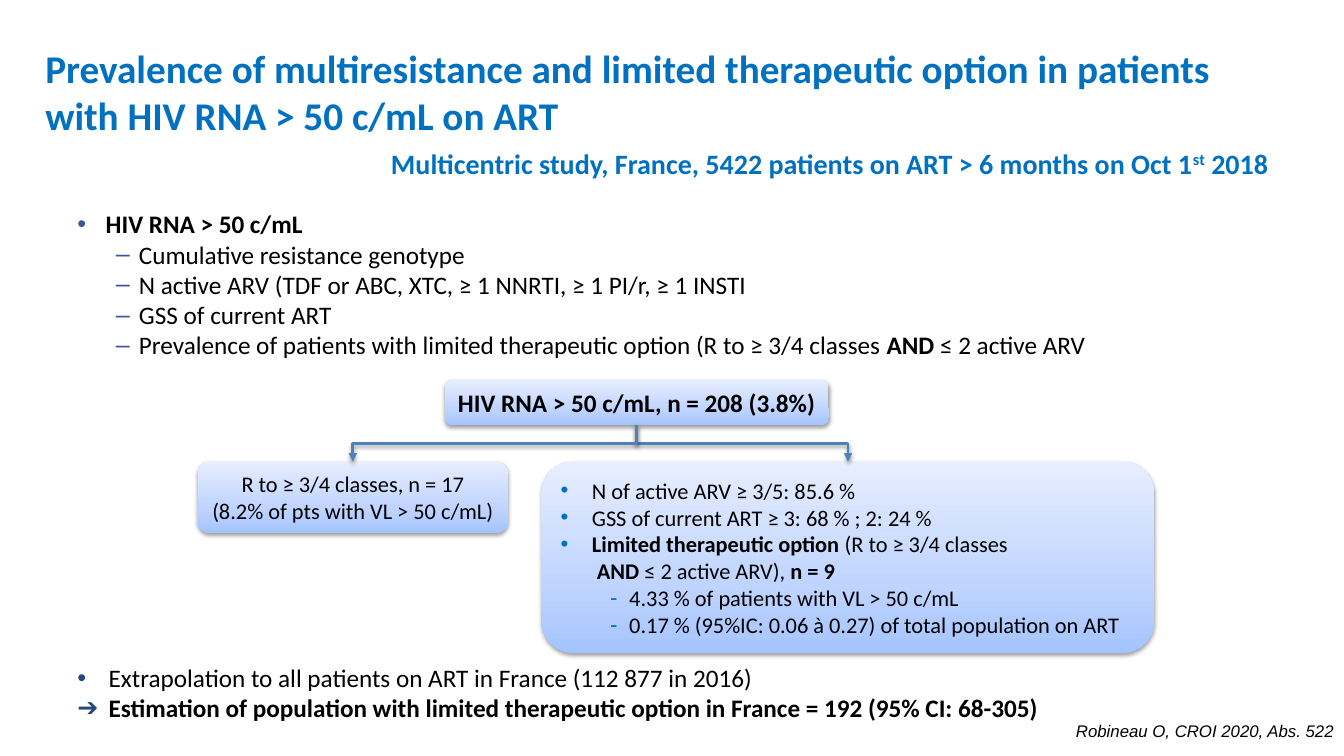
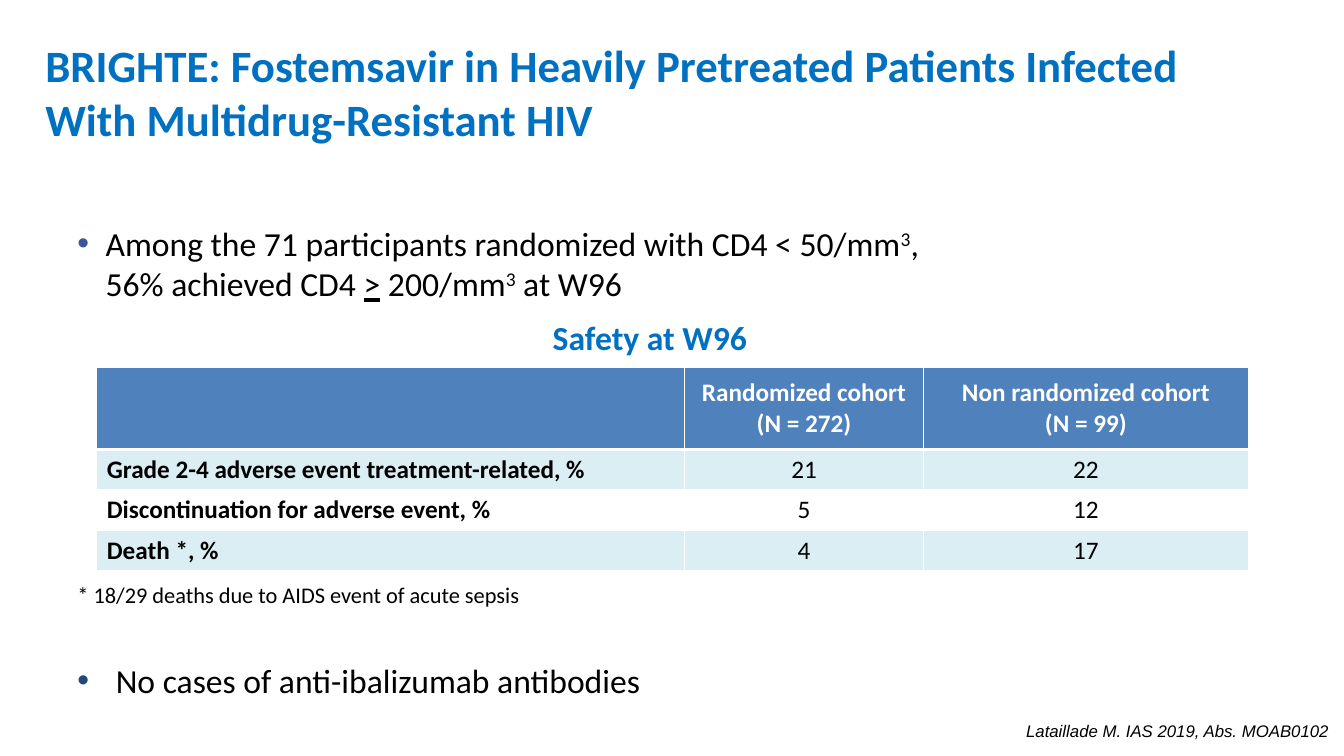
from copy import deepcopy

from lxml import etree
from pptx import Presentation
from pptx.dml.color import RGBColor
from pptx.enum import shapes, text
from pptx.oxml import ns
from pptx.util import Inches, Pt

BLUE, BLACK, WHITE = "0070C0", "000000", "FFFFFF"
STEEL, PALE, INDIGO, NAVY = "4F81BD", "DBEEF4", "3C549F", "1F497D"
BOX_GRADIENT = [(0, "A4C4FF"), (0.35, "BFD4FF"), (1, "E6EEFF")]
LEFT, CENTER, RIGHT = text.PP_ALIGN.LEFT, text.PP_ALIGN.CENTER, text.PP_ALIGN.RIGHT
TOP, MIDDLE = text.MSO_ANCHOR.TOP, text.MSO_ANCHOR.MIDDLE
TITLE_AREA = (0.35, 0.28, 12.31, 1.25)

# Bullets: character, colour, text indent, hanging distance
POINT = ("•", INDIGO, 0.28, 0.28)
DASH = ("–", INDIGO, 0.61, 0.23)
BOX_POINT = ("•", BLUE, 0.31, 0.31)
BOX_DASH = ("-", BLUE, 0.68, 0.19)
NOTE_POINT = ("•", NAVY, 0.31, 0.31)
NOTE_ARROW = ("➔", NAVY, 0.31, 0.31)
WIDE_POINT = ("•", NAVY, 0.38, 0.38)

# A paragraph is (bullet, span, span, ...); a span is text or (text, flags):
# b bold, u underlined, ^ superscript.
PREVALENCE_TITLE = ("Prevalence of multiresistance and limited therapeutic option "
                    "in patients with HIV RNA > 50 c/mL on ART")
STUDY = [(None, "Multicentric study, France, 5422 patients on ART > 6 months on Oct 1",
          ("st", "^"), " 2018")]
METHODS = [
    (POINT, ("HIV RNA > 50 c/mL", "b")),
    (DASH, "Cumulative resistance genotype"),
    (DASH, "N active ARV (TDF or ABC, XTC, ≥ 1 NNRTI, ≥ 1 PI/r, ≥ 1 INSTI"),
    (DASH, "GSS of current ART"),
    (DASH, "Prevalence of patients with limited therapeutic option (R to ≥ 3/4 classes ",
     ("AND", "b"), " ≤ 2 active ARV"),
]
VIREMIC = [(None, ("HIV RNA > 50 c/mL, n = 208 (3.8%)", "b"))]
RESISTANT = [(None, "R to ≥ 3/4 classes, n = 17\n(8.2% of pts with VL > 50 c/mL)")]
OPTIONS = [
    (BOX_POINT, "N of active ARV ≥ 3/5: 85.6 %"),
    (BOX_POINT, "GSS of current ART ≥ 3: 68 % ; 2: 24 %"),
    (BOX_POINT, ("Limited therapeutic option ", "b"), "(R to ≥ 3/4 classes\n ",
     ("AND", "b"), " ≤ 2 active ARV), ", ("n = 9", "b")),
    (BOX_DASH, "4.33 % of patients with VL > 50 c/mL"),
    (BOX_DASH, "0.17 % (95%IC: 0.06 à 0.27) of total population on ART"),
]
ESTIMATE = [
    (NOTE_POINT, "Extrapolation to all patients on ART in France (112 877 in 2016)"),
    (NOTE_ARROW, ("Estimation of population with limited therapeutic option in France "
                  "= 192 (95% CI: 68-305)", "b")),
]

BRIGHTE_TITLE = ("BRIGHTE: Fostemsavir in Heavily Pretreated Patients Infected "
                 "With Multidrug-Resistant HIV")
RECOVERY = [(POINT, "Among the 71 participants randomized with CD4 < 50/mm", ("3", "^"),
             ",\n56% achieved CD4 ", (">", "u"), " 200/mm", ("3", "^"), " at W96")]
SAFETY_ROWS = [
    ("", "Randomized cohort\n(N = 272)", "Non randomized cohort\n(N = 99)"),
    ("Grade 2-4 adverse event treatment-related, %", "21", "22"),
    ("Discontinuation for adverse event, %", "5", "12"),
    ("Death *, %", "4", "17"),
]
SAFETY_WIDTHS = (5.83, 2.37, 3.22)
SAFETY_HEIGHTS = (0.82, 0.4, 0.4, 0.4)


def rgb(value):
    return RGBColor.from_string(value)


def inches(area):
    return [Inches(length) for length in area]


def add_element(parent, tag, **attributes):
    return etree.SubElement(parent, ns.qn("a:" + tag),
                            {name: str(value) for name, value in attributes.items()})


def add_solid(parent, color):
    fill = add_element(parent, "solidFill")
    add_element(fill, "srgbClr", val=color)


def add_bullet(para, char, color, indent, hang):
    props = para._p.get_or_add_pPr()
    props.set("marL", str(Inches(indent)))
    props.set("indent", str(-Inches(hang)))
    add_element(add_element(props, "buClr"), "srgbClr", val=color)
    add_element(props, "buFont", typeface="Arial")
    add_element(props, "buChar", char=char)


def write(frame, paragraphs, size=18, color=BLACK, font="Calibri", bold=False,
          italic=False, align=LEFT, anchor=TOP, wrap=True):
    """Fill a text frame with paragraphs of bullets and spans."""
    frame.word_wrap = wrap
    frame.vertical_anchor = anchor
    for index, (bullet, *spans) in enumerate(paragraphs):
        para = frame.add_paragraph() if index else frame.paragraphs[0]
        para.alignment = align
        if bullet:
            add_bullet(para, *bullet)
        for span in spans:
            words, flags = (span, "") if isinstance(span, str) else span
            for number, line in enumerate(words.split("\n")):
                if number:
                    para.add_line_break()
                run = para.add_run()
                run.text = line
                run.font.name = font
                run.font.size = Pt(size)
                run.font.bold = bold or "b" in flags
                run.font.italic = italic
                run.font.underline = "u" in flags
                run.font.color.rgb = rgb(color)
                if "^" in flags:
                    run._r.get_or_add_rPr().set("baseline", "30000")


def add_text(page, area, paragraphs, **style):
    box = page.shapes.add_textbox(*inches(area))
    write(box.text_frame, paragraphs, **style)


def add_page(deck, title, size):
    page = deck.slides.add_slide(deck.slide_layouts[5])
    holder = page.shapes.title
    holder.left, holder.top, holder.width, holder.height = inches(TITLE_AREA)
    holder.text_frame.auto_size = text.MSO_AUTO_SIZE.NONE
    write(holder.text_frame, [(None, title)], size=size, color=BLUE, bold=True, anchor=MIDDLE)
    return page


def add_citation(page, area, words):
    add_text(page, area, [(None, words)], size=12, font="Arial", italic=True, align=RIGHT)


def add_soft_shadow(item):
    effects = add_element(item._element.spPr, "effectLst")
    shadow = add_element(effects, "outerShdw", blurRad=Pt(3.1), dist=Pt(1.6),
                         dir=5400000, rotWithShape=0)
    add_element(add_element(shadow, "srgbClr", val=BLACK), "alpha", val=38000)


def add_gradient_box(page, area, paragraphs, **style):
    box = page.shapes.add_shape(shapes.MSO_SHAPE.ROUNDED_RECTANGLE, *inches(area))
    box.fill.gradient()
    box.fill.gradient_angle = 90
    stop_list = box._element.spPr.find(".//" + ns.qn("a:gsLst"))
    stop_list.append(deepcopy(stop_list[0]))
    for stop, (position, color) in zip(box.fill.gradient_stops, BOX_GRADIENT):
        stop.position = position
        stop.color.rgb = rgb(color)
    box.line.fill.background()
    add_soft_shadow(box)
    write(box.text_frame, paragraphs, anchor=MIDDLE, **style)
    return box


def add_branch(page, parent, child):
    """Draw an elbow arrow from the bottom of parent to the top of child."""
    arrow = page.shapes.add_connector(shapes.MSO_CONNECTOR.ELBOW, 0, 0, 0, 0)
    arrow.begin_connect(parent, 2)
    arrow.end_connect(child, 0)
    x1, y1, x2, y2 = arrow.begin_x, arrow.begin_y, arrow.end_x, arrow.end_y
    drop, run = y2 - y1, abs(x2 - x1)
    # The elbow leaves downwards, so its frame is turned a quarter
    arrow.left, arrow.top = (x1 + x2 - drop) // 2, (y1 + y2 - run) // 2
    arrow.width, arrow.height = drop, run
    frame = arrow._element.spPr.find(ns.qn("a:xfrm"))
    to_right = x2 > x1
    frame.set("rot", "16200000" if to_right else "5400000")
    frame.set("flipH", "1" if to_right else "0")
    frame.set("flipV", "0")
    arrow.line.color.rgb = rgb(STEEL)
    arrow.line.width = Pt(2)
    add_element(arrow.line._get_or_add_ln(), "tailEnd", type="triangle")
    add_soft_shadow(arrow)


def add_borders(cell, bottom):
    props = cell._tc.get_or_add_tcPr()
    for index, (side, width) in enumerate(zip("LRTB", (1, 1, 1, bottom))):
        line = etree.Element(ns.qn("a:ln" + side), w=str(Pt(width)))
        add_solid(line, WHITE)
        props.insert(index, line)


def add_safety_table(page, left, top):
    area = (left, top, sum(SAFETY_WIDTHS), sum(SAFETY_HEIGHTS))
    table = page.shapes.add_table(len(SAFETY_ROWS), len(SAFETY_WIDTHS), *inches(area)).table
    for column, width in zip(table.columns, SAFETY_WIDTHS):
        column.width = Inches(width)
    for r, (values, height) in enumerate(zip(SAFETY_ROWS, SAFETY_HEIGHTS)):
        table.rows[r].height = Inches(height)
        header = r == 0
        for c, value in enumerate(values):
            cell = table.cell(r, c)
            cell.fill.solid()
            cell.fill.fore_color.rgb = rgb(STEEL if header else PALE if r % 2 else WHITE)
            add_borders(cell, bottom=3 if header else 1)
            cell.vertical_anchor = MIDDLE
            if value:
                write(cell.text_frame, [(None, value)], color=WHITE if header else BLACK,
                      bold=header or c == 0, align=CENTER if c else LEFT, anchor=None, wrap=None)


def build_prevalence(deck):
    page = add_page(deck, PREVALENCE_TITLE, 28)
    add_text(page, (0.67, 2.02, 12, 1.65), METHODS)
    viremic = add_gradient_box(page, (4.41, 3.77, 3.81, 0.45), VIREMIC,
                               align=CENTER, wrap=False)
    resistant = add_gradient_box(page, (1.96, 4.58, 3.08, 0.71), RESISTANT,
                                 size=16, align=CENTER, wrap=False)
    options = add_gradient_box(page, (5.37, 4.58, 6.08, 1.9), OPTIONS, size=16)
    add_text(page, (0.67, 6.52, 9.86, 0.71), ESTIMATE)
    add_citation(page, (9.08, 7.1, 4.25, 0.3), "Robineau O, CROI 2020, Abs. 522")
    add_text(page, (3.78, 1.4, 9, 0.44), STUDY, size=20, color=BLUE, bold=True)
    for child in (options, resistant):
        add_branch(page, viremic, child)


def build_safety(deck):
    page = add_page(deck, BRIGHTE_TITLE, 32)
    add_text(page, (0.67, 2.16, 12, 1.04), RECOVERY, size=24)
    add_text(page, (5.37, 3.09, 2.15, 0.5), [(None, "Safety at W96")], size=24,
             color=BLUE, bold=True, align=CENTER, wrap=False)
    add_safety_table(page, 0.96, 3.64)
    add_text(page, (0.67, 5.72, 4.64, 0.37),
             [(None, "* 18/29 deaths due to AIDS event of acute sepsis")], size=16, wrap=False)
    add_text(page, (0.67, 6.5, 8.28, 0.5),
             [(WIDE_POINT, "No cases of anti-ibalizumab antibodies")], size=24)
    add_citation(page, (9.03, 7.1, 4.25, 0.3), "Lataillade M. IAS 2019, Abs. MOAB0102")


def main():
    deck = Presentation()
    deck.slide_width, deck.slide_height = Inches(13.33), Inches(7.5)
    build_prevalence(deck)
    build_safety(deck)
    deck.save("out.pptx")


if __name__ == "__main__":
    main()
